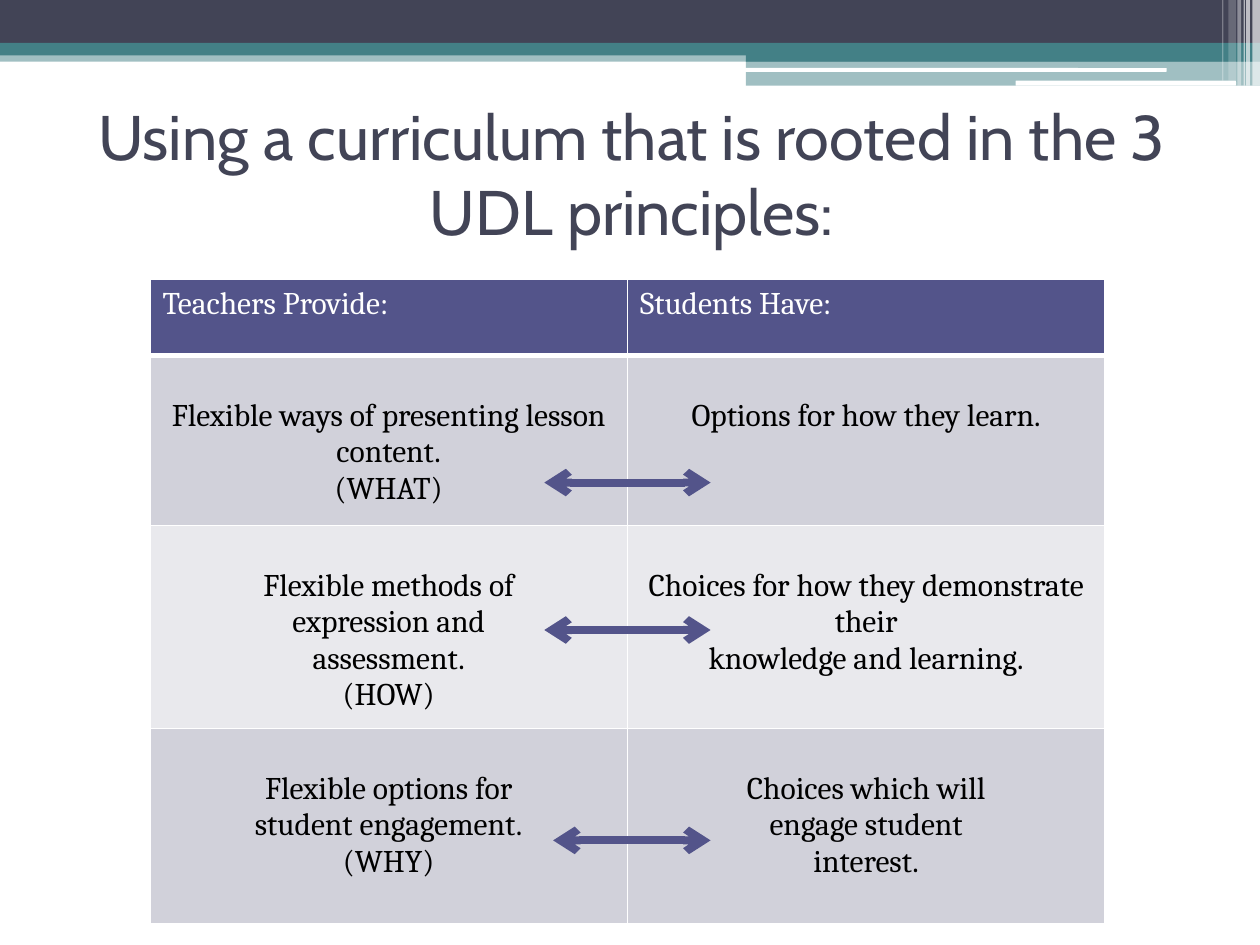
from dataclasses import dataclass

from lxml.etree import SubElement
from pptx import Presentation
from pptx.dml.color import RGBColor
from pptx.enum.shapes import MSO_CONNECTOR as CONN, MSO_SHAPE as SHAPE
from pptx.enum.text import MSO_ANCHOR as ANCHOR, PP_ALIGN as ALIGN
from pptx.oxml.ns import qn
from pptx.util import Inches, Pt

COLORS = {
    "white": "FFFFFF",
    "black": "000000",
    "navy": "424456",
    "teal": "438086",
    "violet": "53548A",
    "band_dark": "D1D1DA",
    "band_light": "E9E9ED",
}


@dataclass
class Bar:
    left: float
    top: float
    width: float
    height: float
    color: str
    alpha: int = 100
    kind: SHAPE = SHAPE.RECTANGLE


@dataclass
class Row:
    height: float
    fill: str
    cells: tuple


@dataclass
class Arrow:
    left: float
    y: float
    right: float = 5.64


BARS = [
    Bar(0, 0.4, 10, 0.09, "teal", 50),
    Bar(0, 0, 10, 0.34, "navy"),
    Bar(0, 0.34, 10, 0.1, "teal"),
    Bar(5.92, 0.39, 4.08, 0.1, "teal"),
    Bar(5.92, 0.48, 4.08, 0.2, "teal", 50),
    Bar(5.91, 0.54, 3.35, 0.03, "white", kind=SHAPE.ROUNDED_RECTANGLE),
    Bar(8.06, 0.64, 1.75, 0.04, "white", kind=SHAPE.ROUNDED_RECTANGLE),
    Bar(9.94, 0, 0.06, 0.68, "white", 65),
    Bar(9.89, 0, 0.03, 0.68, "white", 65),
    Bar(9.87, 0, 0.01, 0.68, "white", 60),
    Bar(9.82, 0, 0.03, 0.68, "white", 40),
    Bar(9.75, 0, 0.06, 0.64, "white", 20),
    Bar(9.7, 0, 0.01, 0.64, "white", 30),
]

ROWS = [
    Row(0.6, "violet", (["Teachers Provide:"], ["Students Have:"])),
    Row(1.35, "band_dark", (
        ["Flexible ways of presenting lesson content.", "(WHAT)"],
        ["Options for how they learn."],
    )),
    Row(1.61, "band_light", (
        ["Flexible methods of", "expression and", "assessment.", "(HOW)"],
        ["Choices for how they demonstrate their", "knowledge and learning."],
    )),
    Row(1.55, "band_dark", (
        ["Flexible options for", "student engagement.", "(WHY)"],
        ["Choices which will", "engage student", "interest."],
    )),
]

ARROWS = [Arrow(4.32, 3.83), Arrow(4.39, 6.67), Arrow(4.32, 5)]

TITLE_FONT = {"name": "Cabin", "size": Pt(36)}
TABLE_FONT = {"name": "Cambria", "size": Pt(18), "bold": False}


def rgb(name: str) -> RGBColor:
    return RGBColor.from_string(COLORS[name])


def write(tf, lines: list, font: dict, color: str, align: ALIGN) -> None:
    for i, line in enumerate(lines):
        p = tf.paragraphs[0] if i == 0 else tf.add_paragraph()
        p.alignment = align
        r = p.add_run()
        r.text = line
        for key, value in font.items():
            setattr(r.font, key, value)
        r.font.color.rgb = rgb(color)


def add_bar(slide, bar: Bar) -> None:
    box = map(Inches, (bar.left, bar.top, bar.width, bar.height))
    s = slide.shapes.add_shape(bar.kind, *box)
    s.shadow.inherit = False
    s.line.fill.background()
    s.fill.solid()
    s.fill.fore_color.rgb = rgb(bar.color)
    if bar.alpha < 100:
        clr = s.element.spPr.find(qn("a:solidFill")).find(qn("a:srgbClr"))
        SubElement(clr, qn("a:alpha"), val=str(bar.alpha * 1000))


def add_title(slide, text: str) -> None:
    s = slide.shapes.add_textbox(Inches(0.6), Inches(0.83), Inches(8.83), Inches(1.08))
    tf = s.text_frame
    tf.word_wrap = True
    tf.vertical_anchor = ANCHOR.MIDDLE
    write(tf, [text], TITLE_FONT, "navy", ALIGN.CENTER)


def set_borders(cell, widths: dict) -> None:
    tc_pr = cell._tc.get_or_add_tcPr()
    for side, width in widths.items():
        ln = SubElement(tc_pr, qn(f"a:ln{side}"), w=str(Pt(width)))
        fill = SubElement(ln, qn("a:solidFill"))
        SubElement(fill, qn("a:srgbClr"), val=COLORS["white"])


def add_principles_table(slide, rows: list) -> None:
    height = sum(row.height for row in rows)
    s = slide.shapes.add_table(
        len(rows), 2, Inches(1.19), Inches(2.22), Inches(7.58), Inches(height)
    )
    table = s.table
    for col in table.columns:
        col.width = Inches(3.79)
    for i, row in enumerate(rows):
        header = i == 0
        table.rows[i].height = Inches(row.height)
        for cell, lines in zip(table.rows[i].cells, row.cells):
            set_borders(cell, {"L": 1, "R": 1, "T": 3 if i == 1 else 1, "B": 3 if header else 1})
            cell.fill.solid()
            cell.fill.fore_color.rgb = rgb(row.fill)
            cell.margin_top = Inches(0.05 if header else 0.34)
            color, align = ("white", ALIGN.LEFT) if header else ("black", ALIGN.CENTER)
            write(cell.text_frame, lines, TABLE_FONT, color, align)


def add_arrow(slide, arrow: Arrow) -> None:
    ends = map(Inches, (arrow.left, arrow.y, arrow.right, arrow.y))
    s = slide.shapes.add_connector(CONN.STRAIGHT, *ends)
    s.line.color.rgb = rgb("violet")
    s.line.width = Pt(4.5)
    ln = s.line._get_or_add_ln()
    for end in ("headEnd", "tailEnd"):
        SubElement(ln, qn(f"a:{end}"), type="arrow")
    SubElement(s.element.spPr, qn("a:effectLst"))


def main() -> None:
    prs = Presentation()
    prs.slide_width, prs.slide_height = Inches(10), Inches(7.5)
    slide = prs.slides.add_slide(prs.slide_layouts[6])
    for bar in BARS:
        add_bar(slide, bar)
    add_title(slide, "Using a curriculum that is rooted in the 3 UDL principles:")
    add_principles_table(slide, ROWS)
    for arrow in ARROWS:
        add_arrow(slide, arrow)
    prs.save("out.pptx")


if __name__ == "__main__":
    main()
